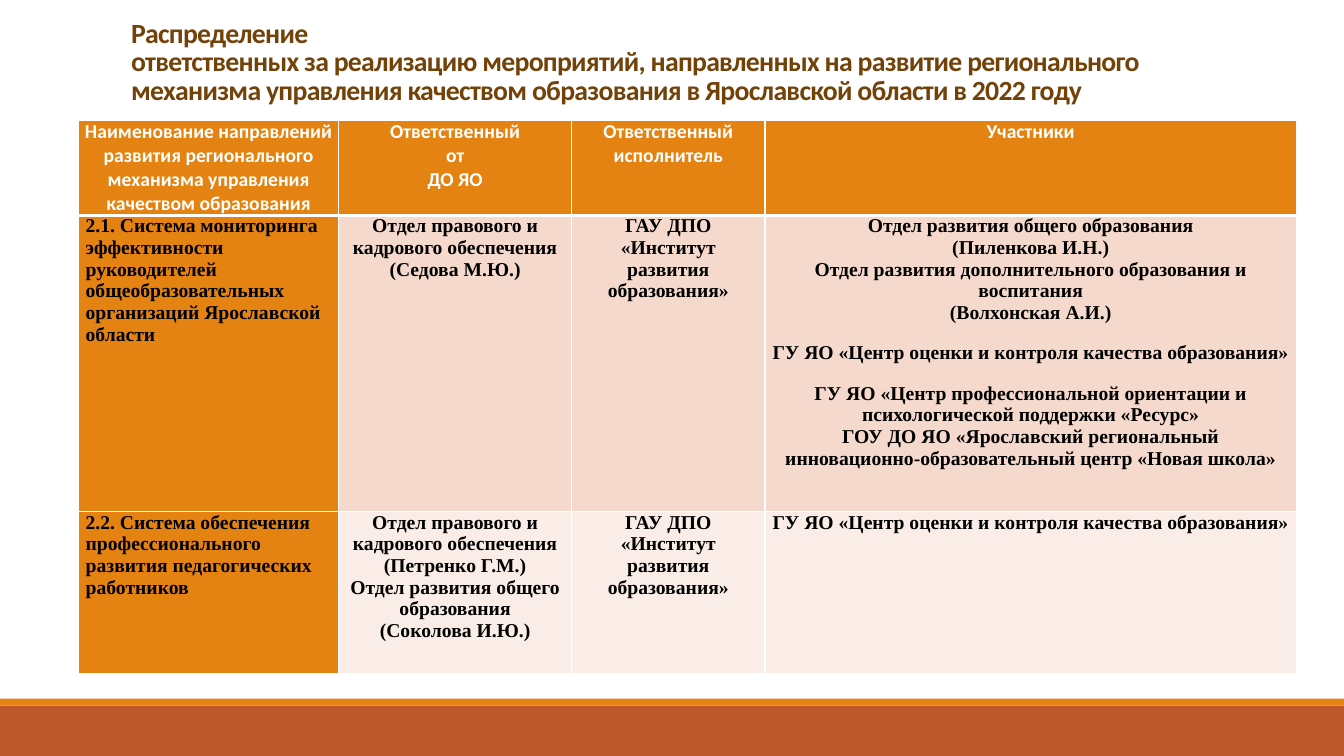
from lxml.etree import SubElement
from pptx import Presentation
from pptx.dml.color import RGBColor
from pptx.enum.shapes import MSO_SHAPE
from pptx.enum.text import MSO_ANCHOR, PP_ALIGN
from pptx.oxml.ns import qn
from pptx.util import Inches, Pt

HUES = {"rust": "BD582C", "amber": "E48312", "brown": "724209", "white": "FFFFFF",
        "black": "000000", "peach": "F5D9CC", "pale": "FAEDE7"}
TITLE = ["Распределение",
         "ответственных за реализацию мероприятий, направленных на развитие регионального "
         "механизма управления качеством образования в Ярославской области в 2022 году"]
HEAD = [["Наименование направлений развития регионального механизма управления качеством образования"],
        ["Ответственный", "от", "ДО ЯО"],
        ["Ответственный", "исполнитель"],
        ["Участники"]]
LEGAL = "Отдел правового и кадрового обеспечения"
SCHOOL = "Отдел развития общего образования"
DOER = "ГАУ ДПО «Институт развития образования»"
CENTRE = "ГУ ЯО «Центр оценки и контроля качества образования»"
CAREER = "ГУ ЯО «Центр профессиональной ориентации и психологической поддержки «Ресурс»"
BODY = [
    [["2.1. Система мониторинга эффективности руководителей общеобразовательных "
      "организаций Ярославской области"],
     [LEGAL, "(Седова М.Ю.)"],
     [DOER],
     [SCHOOL, "(Пиленкова И.Н.)",
      "Отдел развития дополнительного образования и воспитания", "(Волхонская А.И.)",
      CENTRE, CAREER,
      "ГОУ ДО ЯО «Ярославский региональный инновационно-образовательный центр «Новая школа»"]],
    [["2.2. Система обеспечения профессионального развития педагогических работников"],
     [LEGAL, "(Петренко Г.М.)", SCHOOL, "(Соколова И.Ю.)"],
     [DOER],
     [CENTRE]]]
SPACED = {(1, 3, 4), (1, 3, 5)}


class Deck:
    """Holds the style and the current slide; lengths are percent of the slide."""

    def __init__(self):
        self.file = Presentation()
        self.file.slide_width, self.file.slide_height = Inches(13.33), Inches(7.5)
        self.slide = self.file.slides.add_slide(self.file.slide_layouts[5])

    def wide(self, share):
        return int(self.file.slide_width * share / 100)

    def high(self, share):
        return int(self.file.slide_height * share / 100)

    def box(self, x, y, w, h):
        return self.wide(x), self.high(y), self.wide(w), self.high(h)

    def hue(self, name):
        return RGBColor.from_string(HUES[name])

    def bar(self, y, h, hue):
        bar = self.slide.shapes.add_shape(MSO_SHAPE.RECTANGLE, *self.box(0, y, 100, h))
        bar.shadow.inherit = False
        bar.fill.solid()
        bar.fill.fore_color.rgb = self.hue(hue)
        bar.line.fill.background()

    def run(self, para, text, size, face, hue):
        run = para.add_run()
        run.text = text
        font = run.font
        font.size, font.name, font.bold = Pt(size), face, True
        font.color.rgb = self.hue(hue)
        return run

    def title(self, lines, x, y, w, h):
        title = self.slide.shapes.title
        title.left, title.top, title.width, title.height = self.box(x, y, w, h)
        frame = title.text_frame
        frame.word_wrap = True
        frame.vertical_anchor = MSO_ANCHOR.BOTTOM
        frame.margin_left = frame.margin_right = frame.margin_top = frame.margin_bottom = 0
        para = frame.paragraphs[0]
        para.alignment, para.line_spacing = PP_ALIGN.LEFT, 0.85
        for i, line in enumerate(lines):
            if i:
                para.add_line_break()
            run = self.run(para, line, 19.8, "Calibri", "brown")
            run.font._element.set("spc", "-50")

    def edge(self, cell, side, width):
        line = SubElement(cell._tc.get_or_add_tcPr(), qn("a:ln" + side), w=str(Pt(width)))
        fill = SubElement(line, qn("a:solidFill"))
        SubElement(fill, qn("a:srgbClr"), val=HUES["white"])

    def cell(self, cell, lines, row, col):
        for side in "LRTB":
            thick = (row, side) in ((0, "B"), (1, "T"))
            self.edge(cell, side, 3 if thick else 1)
        fill = "amber" if row == 0 or col == 0 else ("peach", "pale")[row - 1]
        cell.fill.solid()
        cell.fill.fore_color.rgb = self.hue(fill)
        cell.margin_left = cell.margin_right = Inches(0.07 if row else 0.06)
        cell.margin_top = cell.margin_bottom = 0
        face, hue = ("Times New Roman", "black") if row else ("Calibri", "white")
        frame = cell.text_frame
        for i, line in enumerate(lines):
            para = frame.add_paragraph() if i else frame.paragraphs[0]
            para.alignment = PP_ALIGN.LEFT if row and col == 0 else PP_ALIGN.CENTER
            if (row, col, i) in SPACED:
                para.space_before = Pt(13.3)
            self.run(para, line, 14, face, hue)

    def table(self, rows, x, y, cols, highs):
        place = self.box(x, y, sum(cols), sum(highs))
        table = self.slide.shapes.add_table(len(rows), len(cols), *place).table
        table.first_row = table.horz_banding = False
        for col, share in zip(table.columns, cols):
            col.width = self.wide(share)
        for row, share in zip(table.rows, highs):
            row.height = self.high(share)
        for r, row in enumerate(rows):
            for c, lines in enumerate(row):
                self.cell(table.cell(r, c), lines, r, c)

    def save(self):
        self.file.save("out.pptx")


def main():
    deck = Deck()
    deck.bar(93.33, 6.67, "rust")
    deck.bar(92.4, 0.93, "amber")
    deck.title(TITLE, 9.75, 2, 81, 12)
    deck.table([HEAD] + BODY, 5.85, 15.87, [19.35, 17.33, 14.4, 39.53], [12.6, 39.2, 21.4])
    deck.save()


if __name__ == "__main__":
    main()
